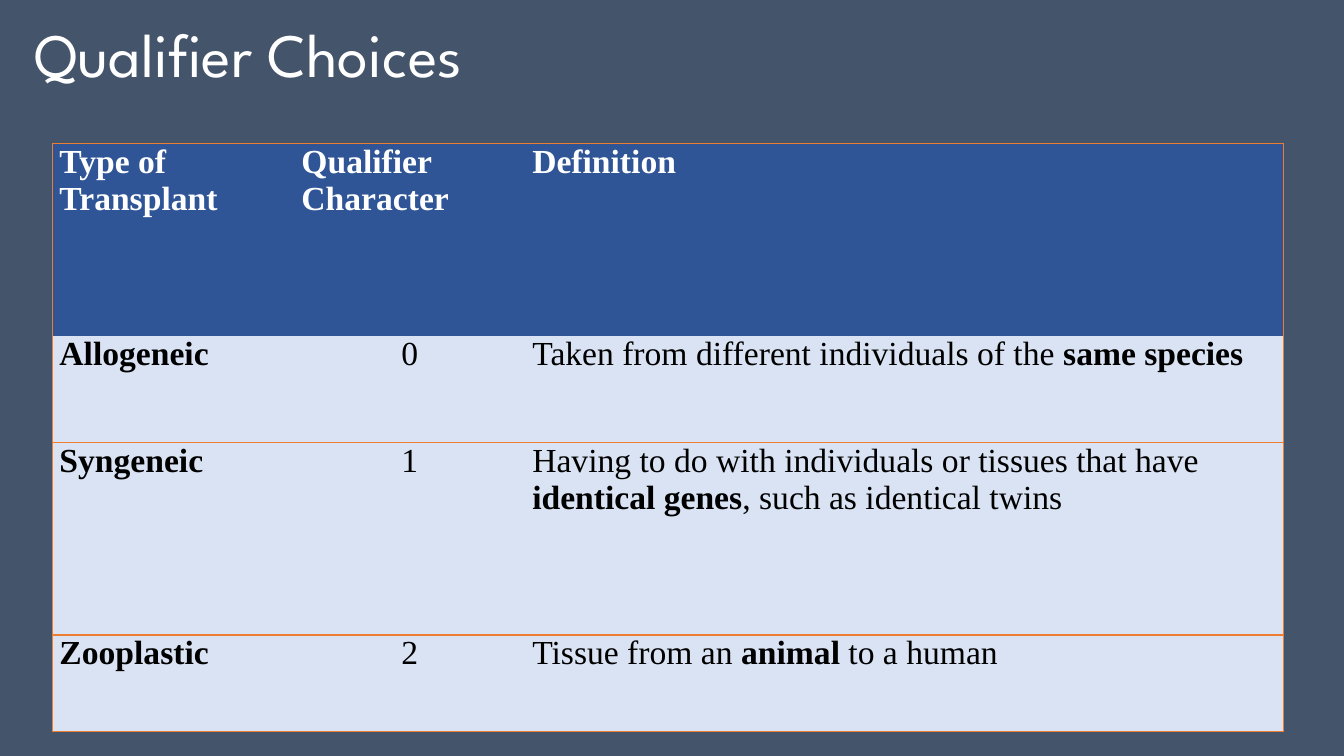
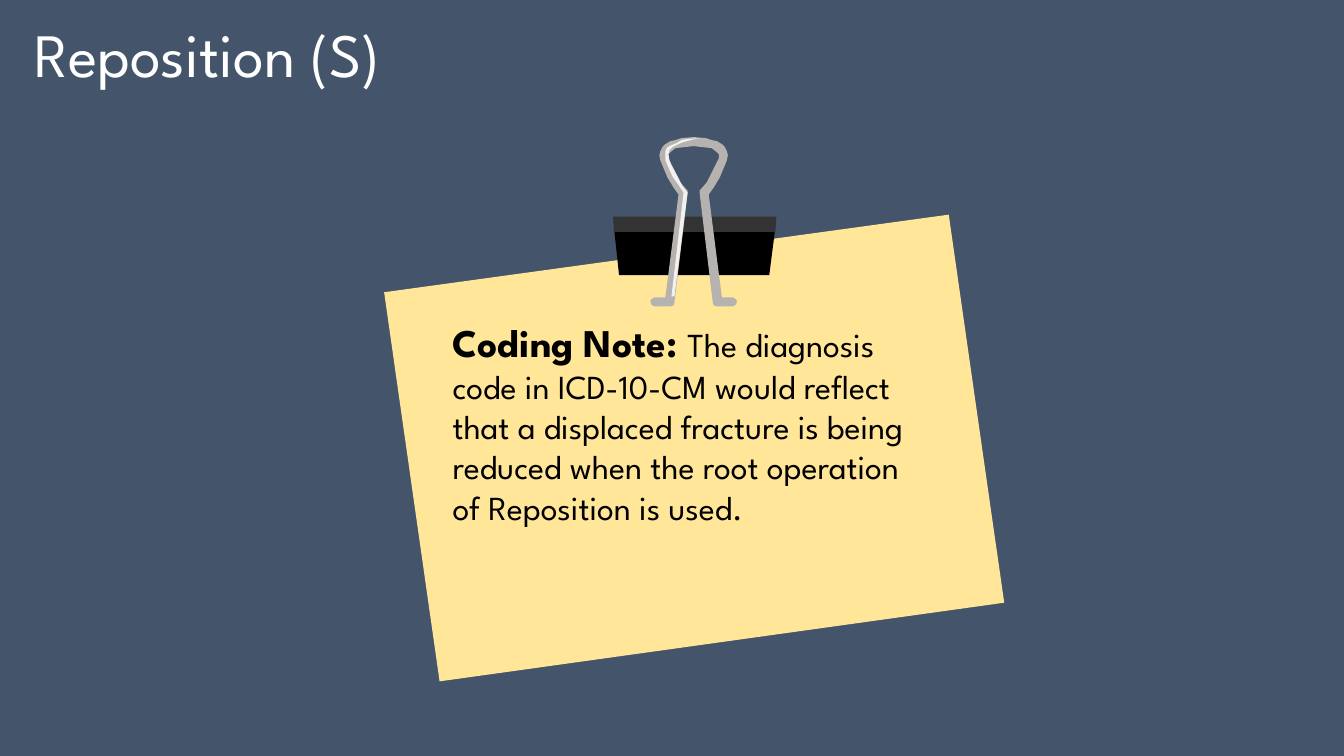
from dataclasses import dataclass
from typing import Any, NamedTuple

import lxml.etree
import pptx
import pptx.dml.color
import pptx.enum.text
import pptx.oxml.ns
import pptx.util

UNIT = pptx.util.Inches(0.01)  # one column or row of the slide grid
COLUMNS, ROWS = 1333, 750

SLATE, WHITE, BLACK = "44546A", "FFFFFF", "000000"
HEADER_BLUE, BODY_BLUE, RULE_ORANGE = "2F5597", "DAE3F3", "ED7D31"
CARD_YELLOW, CLIP_EDGE = "FFE699", "333333"
WIRE_GREY, WIRE_SHINE = "B5B2AF", "F3F1EF"
HEADING_FONT, TABLE_FONT = "League Spartan", "Times New Roman"

ALIGN = pptx.enum.text.PP_ALIGN
ANCHOR = pptx.enum.text.MSO_ANCHOR
Point = tuple[int, int]


class Box(NamedTuple):
    """A rectangle in grid columns and rows."""
    left: int
    top: int
    width: int
    height: int

    def lengths(self) -> list[int]:
        return [value * UNIT for value in self]


class Span(NamedTuple):
    text: str
    bold: bool = False
    size: int = 24


@dataclass(frozen=True)
class Outline:
    color: str
    points: list[Point]


@dataclass(frozen=True)
class QualifierRow:
    height: int
    cells: list[list[Span]]
    header: bool = False


TITLE_BOX = Box(24, 12, 972, 91)
TABLE_BOX = Box(52, 142, 1221, 584)
NOTE_BOX = Box(439, 311, 498, 259)
TABLE_COLUMNS = [240, 229, 752]

QUALIFIER_ROWS = [
    QualifierRow(191, [[Span("Type of Transplant", True)], [Span("Qualifier Character", True)],
                       [Span("Definition", True)]], header=True),
    QualifierRow(106, [[Span("Allogeneic", True)], [Span("0")],
                       [Span("Taken from different individuals of the "),
                        Span("same species", True)]]),
    QualifierRow(191, [[Span("Syngeneic", True)], [Span("1")],
                       [Span("Having to do with individuals or tissues that have "),
                        Span("identical genes", True), Span(", such as identical twins")]]),
    QualifierRow(96, [[Span("Zooplastic", True)], [Span("2")],
                      [Span("Tissue from an "), Span("animal", True), Span(" to a human")]]),
]

CODING_NOTE = [
    Span("Coding Note: ", True, 28),
    Span("The diagnosis code in ICD-10-CM would reflect that a displaced fracture is being "
         "reduced when the root operation of Reposition is used."),
]

CLIP_CENTER = 688
WIRE_LEFT_HALF = [
    (688, 136), (676, 137), (670, 139), (665, 140), (660, 143), (657, 146), (655, 150),
    (654, 154), (655, 159), (657, 164), (662, 176), (668, 186), (673, 193), (660, 295),
    (649, 295), (646, 297), (645, 299), (646, 302), (649, 304), (665, 304), (668, 303),
    (669, 300), (682, 192), (682, 189), (675, 181), (670, 171), (665, 161), (663, 157),
    (663, 153), (665, 151), (670, 147), (679, 146), (688, 145),
]
WIRE_SHINE_POINTS = [
    (682, 191), (677, 185), (672, 175), (666, 164), (664, 159), (663, 153), (664, 149),
    (667, 146), (673, 143), (678, 141), (689, 138), (694, 137), (681, 138), (676, 139),
    (671, 142), (666, 144), (662, 146), (660, 150), (660, 159), (662, 164), (667, 175),
    (674, 185), (678, 191), (666, 294), (669, 294),
]


def mirrored(half: list[Point]) -> list[Point]:
    """Complete a left half with its reflection in the clip's centre line."""
    return half + [(2 * CLIP_CENTER - x, y) for x, y in reversed(half)]


CARD_AND_CLIP = [
    Outline(CARD_YELLOW, [(996, 598), (436, 676), (381, 290), (941, 213)]),
    Outline(BLACK, [(614, 273), (763, 273), (769, 226), (609, 226)]),
    Outline(CLIP_EDGE, [(608, 215), (609, 230), (769, 230), (770, 215)]),
    Outline(WIRE_GREY, mirrored(WIRE_LEFT_HALF)),
    Outline(WIRE_SHINE, WIRE_SHINE_POINTS),
]


def rgb(color: str) -> pptx.dml.color.RGBColor:
    return pptx.dml.color.RGBColor.from_string(color)


def paint(fill: Any, color: str) -> None:
    fill.solid()
    fill.fore_color.rgb = rgb(color)


def apply_format(target: Any, values: dict[str, Any]) -> None:
    for name, value in values.items():
        setattr(target, name, value)


def write_spans(paragraph: Any, spans: list[Span], font: str, color: str) -> None:
    for span in spans:
        run = paragraph.add_run()
        run.text = span.text
        apply_format(run.font, {"name": font, "size": pptx.util.Pt(span.size),
                                "bold": span.bold})
        run.font.color.rgb = rgb(color)


def add_text(slide: Any, box: Box, spans: list[Span], color: str,
             anchor: Any = ANCHOR.TOP, line_spacing: float = 1.0) -> None:
    frame = slide.shapes.add_textbox(*box.lengths()).text_frame
    apply_format(frame, {"word_wrap": True, "vertical_anchor": anchor})
    paragraph = frame.paragraphs[0]
    paragraph.line_spacing = line_spacing
    write_spans(paragraph, spans, HEADING_FONT, color)


def add_titled_slide(presentation: Any, title: str) -> Any:
    slide = presentation.slides.add_slide(presentation.slide_layouts[6])
    add_text(slide, TITLE_BOX, [Span(title, size=44)], WHITE, ANCHOR.MIDDLE, 0.9)
    return slide


def add_outline(slide: Any, outline: Outline) -> None:
    start, *rest = outline.points
    builder = slide.shapes.build_freeform(*start, scale=UNIT)
    builder.add_line_segments(rest, close=True)
    shape = builder.convert_to_shape()
    shape.shadow.inherit = False
    paint(shape.fill, outline.color)
    shape.line.fill.background()


def set_borders(cell: Any, ruled_sides: set[str]) -> None:
    """Rule the named sides (L, R, T, B) and clear the others."""
    qualified = pptx.oxml.ns.qn
    properties = cell._tc.get_or_add_tcPr()
    for position, side in enumerate("LRTB"):
        line = lxml.etree.Element(qualified(f"a:ln{side}"), w=str(pptx.util.Pt(1)))
        if side in ruled_sides:
            fill = lxml.etree.SubElement(line, qualified("a:solidFill"))
            lxml.etree.SubElement(fill, qualified("a:srgbClr"), val=RULE_ORANGE)
        else:
            lxml.etree.SubElement(line, qualified("a:noFill"))
        properties.insert(position, line)


def ruled_sides(row: int, column: int) -> set[str]:
    """Frame the table and rule between body rows, but not under the header."""
    rules = {"L": column == 0, "R": column == len(TABLE_COLUMNS) - 1,
             "T": row != 1, "B": row != 0}
    return {side for side, ruled in rules.items() if ruled}


def add_qualifier_table(slide: Any) -> None:
    table = slide.shapes.add_table(len(QUALIFIER_ROWS), len(TABLE_COLUMNS),
                                   *TABLE_BOX.lengths()).table
    table.horz_banding = False
    for column, width in zip(table.columns, TABLE_COLUMNS):
        column.width = width * UNIT
    margins = {"margin_left": 7 * UNIT, "margin_right": 7 * UNIT,
               "margin_top": 0, "margin_bottom": 0}
    for row_index, row in enumerate(QUALIFIER_ROWS):
        table.rows[row_index].height = row.height * UNIT
        for column_index, spans in enumerate(row.cells):
            cell = table.cell(row_index, column_index)
            apply_format(cell, margins)
            paint(cell.fill, HEADER_BLUE if row.header else BODY_BLUE)
            set_borders(cell, ruled_sides(row_index, column_index))
            paragraph = cell.text_frame.paragraphs[0]
            centered = column_index == 1 and not row.header
            paragraph.alignment = ALIGN.CENTER if centered else ALIGN.LEFT
            write_spans(paragraph, spans, TABLE_FONT, WHITE if row.header else BLACK)


def main() -> None:
    presentation = pptx.Presentation()
    apply_format(presentation, {"slide_width": COLUMNS * UNIT, "slide_height": ROWS * UNIT})
    paint(presentation.slide_master.background.fill, SLATE)

    add_qualifier_table(add_titled_slide(presentation, "Qualifier Choices"))

    reposition_slide = add_titled_slide(presentation, "Reposition (S)")
    for outline in CARD_AND_CLIP:
        add_outline(reposition_slide, outline)
    add_text(reposition_slide, NOTE_BOX, CODING_NOTE, BLACK)

    presentation.save("out.pptx")


if __name__ == "__main__":
    main()
